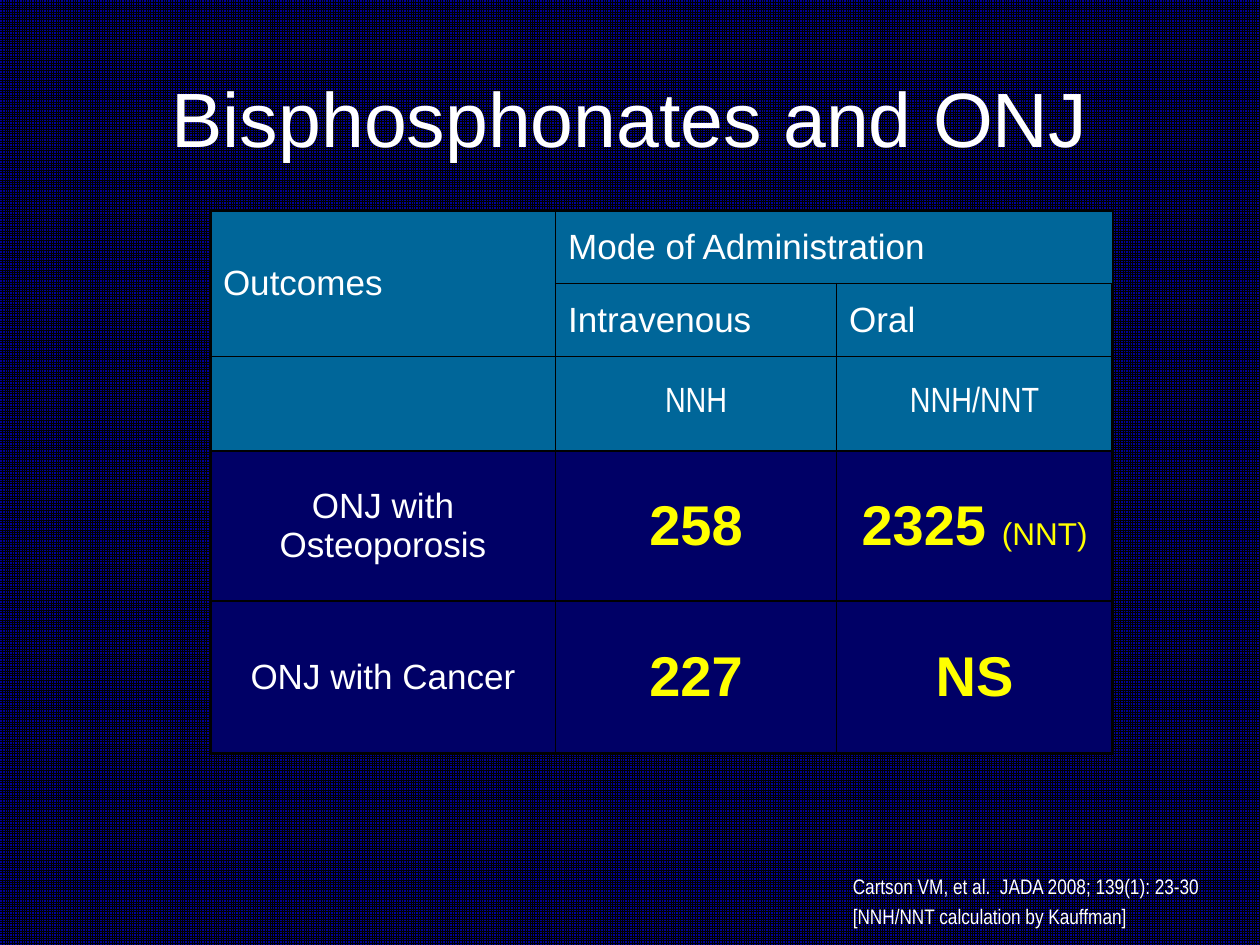
from lxml.etree import SubElement
from pptx import Presentation
from pptx.dml.color import RGBColor
from pptx.enum.dml import MSO_PATTERN
from pptx.enum.text import MSO_ANCHOR, PP_ALIGN
from pptx.oxml.ns import qn
from pptx.util import Inches, Pt

COLORS = {"black": "000000", "grid": "000099", "white": "FFFFFF",
          "yellow": "FFFF00", "header": "006699", "body": "000066"}

TITLE = "Bisphosphonates and ONJ"
CITATION = ["Cartson VM, et al.  JADA 2008; 139(1): 23-30",
            "[NNH/NNT calculation by Kauffman]"]
ROWS = [
    ["Outcomes", "Mode of Administration", ""],
    ["", "Intravenous", "Oral"],
    ["", "NNH", "NNH/NNT"],
    ["ONJ with Osteoporosis", "258", "2325 (NNT)"],
    ["ONJ with Cancer", "227", "NS"],
]
MERGES = [((0, 0), (1, 0)), ((0, 1), (0, 2))]
COL_WIDTHS = [2.74, 2.23, 2.19]
ROW_HEIGHTS = [0.58, 0.58, 0.75, 1.19, 1.21]
UNIT_ROW, FIRST_BODY_ROW = 2, 3
INNER, OUTER = 1, 2.25


def rgb(name):
    return RGBColor.from_string(COLORS[name])


def add_text(p, text, size=20, font="Arial", color="white", bold=False,
             align=PP_ALIGN.LEFT, before=0, spacing=None):
    p.alignment = align
    p.space_before = Pt(before)
    if spacing:
        p.line_spacing = spacing
    r = p.add_run()
    r.text = text
    r.font.size, r.font.name, r.font.bold = Pt(size), font, bold
    r.font.color.rgb = rgb(color)


def add_box(s, left, top, width, height, anchor=MSO_ANCHOR.TOP):
    sp = s.shapes.add_textbox(*map(Inches, (left, top, width, height)))
    tf = sp.text_frame
    tf.word_wrap = True
    tf.vertical_anchor = anchor
    return tf


def set_borders(cell, widths):
    tcPr = cell._tc.get_or_add_tcPr()
    for side, width in widths.items():
        ln = SubElement(tcPr, qn(f"a:ln{side}"), w=str(Pt(width)))
        fill = SubElement(ln, qn("a:solidFill"))
        SubElement(fill, qn("a:srgbClr"), val=COLORS["black"])


def fill_cell(cell, text, row, col):
    is_body = row >= FIRST_BODY_ROW
    last_row, last_col = len(ROWS) - 1, len(COL_WIDTHS) - 1
    set_borders(cell, {"L": INNER if col else OUTER,
                       "R": OUTER if col == last_col else INNER,
                       "T": INNER if row else OUTER,
                       "B": OUTER if row == last_row else INNER})
    cell.fill.solid()
    cell.fill.fore_color.rgb = rgb("body" if is_body else "header")
    cell.vertical_anchor = MSO_ANCHOR.MIDDLE
    if not text:
        return
    p = cell.text_frame.paragraphs[0]
    align = PP_ALIGN.CENTER if row >= UNIT_ROW else PP_ALIGN.LEFT
    if is_body and col:
        value, bracket, note = text.partition("(")
        style = dict(color="yellow", align=align, before=6.4)
        add_text(p, value, size=32, bold=True, **style)
        if note:
            add_text(p, bracket + note, size=18, **style)
    else:
        font = "Arial Narrow" if row == UNIT_ROW else "Arial"
        add_text(p, text, font=font, align=align, before=4)


def add_outcome_table(s, left, top):
    shape = s.shapes.add_table(len(ROWS), len(COL_WIDTHS), Inches(left), Inches(top),
                               Inches(sum(COL_WIDTHS)), Inches(sum(ROW_HEIGHTS)))
    table = shape.table
    table.first_row = table.horz_banding = False
    for column, width in zip(table.columns, COL_WIDTHS):
        column.width = Inches(width)
    for row, height in zip(table.rows, ROW_HEIGHTS):
        row.height = Inches(height)
    for start, end in MERGES:
        table.cell(*start).merge(table.cell(*end))
    for i, texts in enumerate(ROWS):
        for j, text in enumerate(texts):
            fill_cell(table.cell(i, j), text, i, j)


def main():
    prs = Presentation()
    prs.slide_width, prs.slide_height = Inches(10), Inches(7.5)
    s = prs.slides.add_slide(prs.slide_layouts[6])
    bg = s.background.fill
    bg.patterned()
    bg.pattern = MSO_PATTERN.SMALL_GRID
    bg.fore_color.rgb, bg.back_color.rgb = rgb("black"), rgb("grid")

    tf = add_box(s, 0.5, 0.3, 9, 1.25, MSO_ANCHOR.MIDDLE)
    add_text(tf.paragraphs[0], TITLE, size=44, align=PP_ALIGN.CENTER)

    add_outcome_table(s, 1.67, 1.67)

    tf = add_box(s, 6.67, 6.92, 3.33, 0.52)
    for i, line in enumerate(CITATION):
        p = tf.add_paragraph() if i else tf.paragraphs[0]
        add_text(p, line, size=12, font="Arial Narrow", before=6, spacing=0.8)

    prs.save("out.pptx")


if __name__ == "__main__":
    main()
